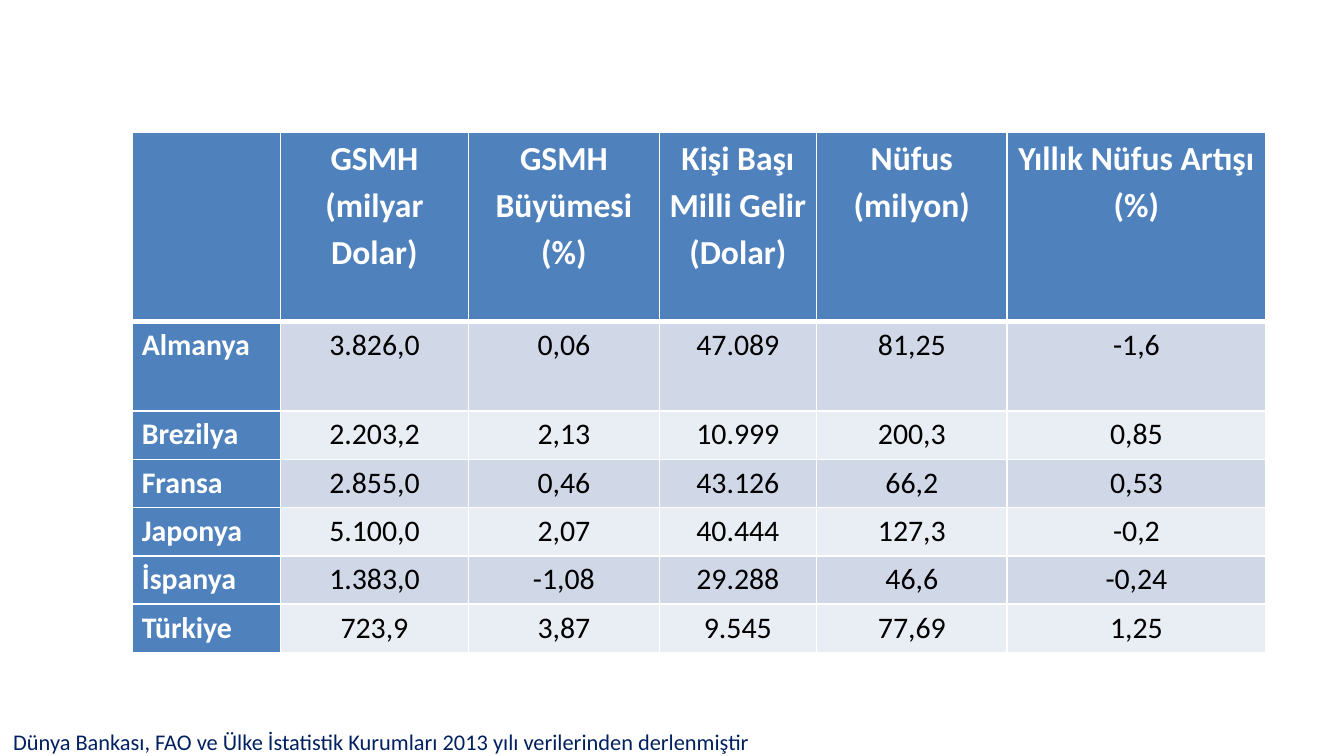
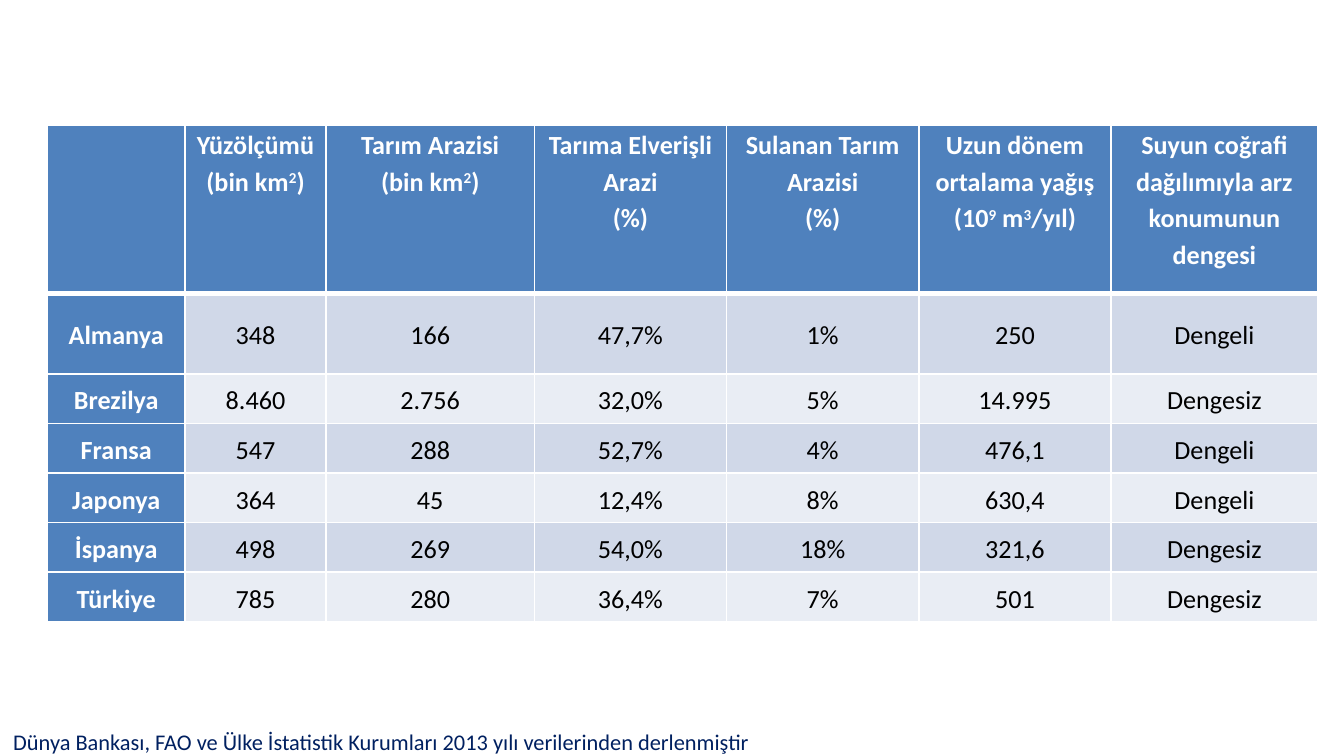
from lxml.etree import SubElement
from pptx import Presentation
from pptx.dml.color import RGBColor
from pptx.enum.text import MSO_ANCHOR, MSO_AUTO_SIZE, PP_ALIGN
from pptx.oxml.ns import qn
from pptx.util import Pt

# Content: a caret marks the next character as superscript
COUNTRIES = ["Almanya", "Brezilya", "Fransa", "Japonya", "İspanya", "Türkiye"]
SOURCE_NOTE = "Dünya Bankası, FAO ve Ülke İstatistik Kurumları 2013 yılı verilerinden derlenmiştir"

ECONOMY = {
    "left": 71, "top": 71,
    "columns": [79.2, 100.8, 102.2, 84.2, 102.2, 138.5],
    "rows": [101.2, 48] + [25.9] * 5,
    "header_size": 18, "body_size": 16,
    "country_align": PP_ALIGN.LEFT, "body_anchor": MSO_ANCHOR.TOP,
    "headers": ["GSMH (milyar Dolar)", "GSMH Büyümesi (%)", "Kişi Başı Milli Gelir (Dolar)",
                "Nüfus (milyon)", "Yıllık Nüfus Artışı (%)"],
    "values": [
        ["3.826,0", "0,06", "47.089", "81,25", "-1,6"],
        ["2.203,2", "2,13", "10.999", "200,3", "0,85"],
        ["2.855,0", "0,46", "43.126", "66,2", "0,53"],
        ["5.100,0", "2,07", "40.444", "127,3", "-0,2"],
        ["1.383,0", "-1,08", "29.288", "46,6", "-0,24"],
        ["723,9", "3,87", "9.545", "77,69", "1,25"],
    ],
}

LAND_AND_WATER = {
    "left": 25.5, "top": 67,
    "columns": [73.6, 75.6, 111.6, 103, 103, 103, 110.8],
    "rows": [90, 43.2] + [26.6] * 5,
    "header_size": 14, "body_size": 14,
    "country_align": PP_ALIGN.CENTER, "body_anchor": MSO_ANCHOR.MIDDLE,
    "headers": ["Yüzölçümü (bin km^2)", "Tarım Arazisi\n(bin km^2)", "Tarıma Elverişli Arazi\n(%)",
                "Sulanan Tarım Arazisi\n(%)", "Uzun dönem ortalama yağış (10^9 m^3/yıl)",
                "Suyun coğrafi dağılımıyla arz konumunun dengesi"],
    "values": [
        ["348", "166", "47,7%", "1%", "250", "Dengeli"],
        ["8.460", "2.756", "32,0%", "5%", "14.995", "Dengesiz"],
        ["547", "288", "52,7%", "4%", "476,1", "Dengeli"],
        ["364", "45", "12,4%", "8%", "630,4", "Dengeli"],
        ["498", "269", "54,0%", "18%", "321,6", "Dengesiz"],
        ["785", "280", "36,4%", "7%", "501", "Dengesiz"],
    ],
}

# Shared look
COLORS = {"heading": "4F81BD", "odd": "D0D8E8", "even": "E9EDF4",
          "white": "FFFFFF", "black": "000000", "note": "002060"}
FONT = "Calibri"
CELL_MARGINS = {"margin_left": Pt(5), "margin_right": Pt(5), "margin_top": 0, "margin_bottom": 0}
THIN, THICK = Pt(1), Pt(3)


def color(name):
    return RGBColor.from_string(COLORS[name])


def set_all(target, values):
    for name, value in values.items():
        setattr(target, name, value)


def add_run(paragraph, text, size, color_name, bold=False):
    run = paragraph.add_run()
    run.text = text
    set_all(run.font, {"name": FONT, "size": Pt(size), "bold": bold})
    run.font.color.rgb = color(color_name)
    return run


def write_text(cell, text, align, **style):
    frame = cell.text_frame
    for index, line in enumerate(text.split("\n")):
        paragraph = frame.add_paragraph() if index else frame.paragraphs[0]
        set_all(paragraph, {"alignment": align, "line_spacing": 1.15})
        start, *raised_parts = line.split("^")
        add_run(paragraph, start, **style)
        for part in raised_parts:
            raised = add_run(paragraph, part[0], **style)
            raised._r.get_or_add_rPr().set("baseline", "30000")
            add_run(paragraph, part[1:], **style)


def set_borders(cell, row):
    properties = cell._tc.get_or_add_tcPr()
    widths = {"lnL": THIN, "lnR": THIN,
              "lnT": THICK if row == 1 else THIN,
              "lnB": THICK if row == 0 else THIN}
    for side, width in widths.items():
        line = SubElement(properties, qn(f"a:{side}"), w=str(width))
        fill = SubElement(line, qn("a:solidFill"))
        SubElement(fill, qn("a:srgbClr"), val=COLORS["white"])


def add_data_table(slide, data):
    rows = [[""] + data["headers"]]
    rows += [[country] + values for country, values in zip(COUNTRIES, data["values"])]
    widths, heights = data["columns"], data["rows"]
    table = slide.shapes.add_table(len(heights), len(widths), Pt(data["left"]), Pt(data["top"]),
                                   Pt(sum(widths)), Pt(sum(heights))).table
    for column, width in zip(table.columns, widths):
        column.width = Pt(width)
    for table_row, height in zip(table.rows, heights):
        table_row.height = Pt(height)

    for row, texts in enumerate(rows):
        for column, text in enumerate(texts):
            cell = table.cell(row, column)
            heading = row == 0 or column == 0
            set_all(cell, CELL_MARGINS)
            cell.vertical_anchor = data["body_anchor"] if row else MSO_ANCHOR.TOP
            set_borders(cell, row)
            cell.fill.solid()
            cell.fill.fore_color.rgb = color("heading" if heading else "odd" if row % 2 else "even")
            if text:
                write_text(cell, text,
                           data["country_align"] if column == 0 else PP_ALIGN.CENTER,
                           size=data["body_size"] if row else data["header_size"],
                           color_name="white" if heading else "black", bold=heading)


def add_source_note(slide):
    frame = slide.shapes.add_textbox(0, Pt(386.6), Pt(592.6), Pt(21.8)).text_frame
    set_all(frame, {"word_wrap": True, "auto_size": MSO_AUTO_SIZE.SHAPE_TO_FIT_TEXT})
    add_run(frame.paragraphs[0], SOURCE_NOTE, 12, "note")


def main():
    presentation = Presentation()
    set_all(presentation, {"slide_width": Pt(720), "slide_height": Pt(405)})
    for data in (ECONOMY, LAND_AND_WATER):
        slide = presentation.slides.add_slide(presentation.slide_layouts[6])
        add_data_table(slide, data)
        add_source_note(slide)
    presentation.save("out.pptx")


if __name__ == "__main__":
    main()
